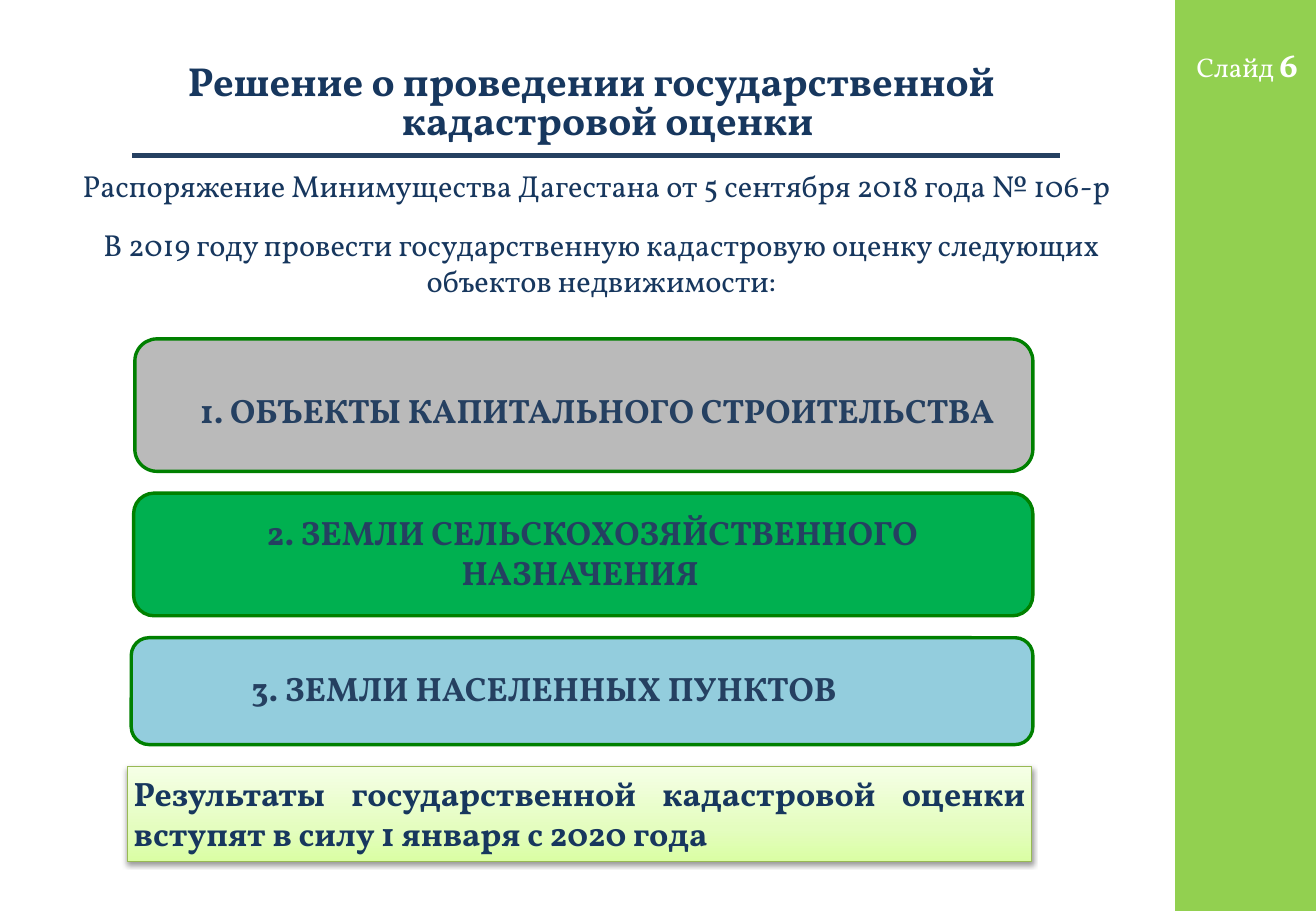
from copy import deepcopy
from dataclasses import dataclass

from lxml.etree import SubElement
from pptx import Presentation
from pptx.dml.color import RGBColor
from pptx.enum.shapes import MSO_CONNECTOR, MSO_SHAPE
from pptx.enum.text import MSO_ANCHOR, MSO_AUTO_SIZE, PP_ALIGN
from pptx.oxml.ns import qn
from pptx.util import Inches, Pt


@dataclass(frozen=True)
class Theme:
    font: str = "Vollkorn"
    navy: str = "17375E"
    slate: str = "254061"
    white: str = "FFFFFF"
    lime: str = "92D050"
    edge: str = "008000"
    gray: str = "BABABA"
    green: str = "00B050"
    blue: str = "93CDDD"
    rim: str = "98B955"
    fade: tuple = ((0, "DAFEA4"), (0.35, "E4FDBF"), (1, "F5FFE6"))
    title: int = 24
    head: int = 20
    body: int = 18
    small: int = 16


THEME = Theme()


def color(code):
    return RGBColor.from_string(code)


def place(box):
    return [Inches(side) for side in box]


def style(run, size, shade, bold):
    run.font.name = THEME.font
    run.font.size = Pt(size)
    run.font.bold = bold
    run.font.color.rgb = color(shade)


def write(shape, text, size, shade, bold=False, align=PP_ALIGN.CENTER,
          anchor=MSO_ANCHOR.TOP, inset=0.05, left=0, first=0):
    frame = shape.text_frame
    frame.text = text
    frame.word_wrap = True
    frame.auto_size = MSO_AUTO_SIZE.SHAPE_TO_FIT_TEXT
    frame.vertical_anchor = anchor
    frame.margin_left = frame.margin_right = Inches(inset)
    frame.margin_top = frame.margin_bottom = Inches(inset)
    para = frame.paragraphs[0]
    para.alignment = align
    if first:
        props = para._p.get_or_add_pPr()
        props.set("marL", str(Inches(left)))
        props.set("indent", str(Inches(first)))
    style(para.runs[0], size, shade, bold)
    return para


def add_text(shapes, box, text, size, shade, **options):
    shape = shapes.add_textbox(*place(box))
    return write(shape, text, size, shade, **options)


def add_block(shapes, kind, box, fill=None, line=None, width=2):
    shape = shapes.add_shape(kind, *place(box))
    shape.shadow.inherit = False
    if fill:
        shape.fill.solid()
        shape.fill.fore_color.rgb = color(fill)
    if line:
        shape.line.color.rgb = color(line)
        shape.line.width = Pt(width)
    else:
        shape.line.fill.background()
    return shape


def add_rule(shapes, left, right, top):
    rule = shapes.add_connector(
        MSO_CONNECTOR.STRAIGHT, *place((left, top, right, top)))
    rule.line.color.rgb = color(THEME.slate)
    rule.line.width = Pt(3)
    SubElement(rule._element.spPr, qn("a:effectLst"))


def add_item(shapes, card, box, text, fill, **options):
    group = shapes.add_group_shape().shapes
    add_block(group, MSO_SHAPE.ROUNDED_RECTANGLE, card, fill, THEME.edge)
    label = add_block(group, MSO_SHAPE.RECTANGLE, box, fill)
    write(label, text, THEME.head, THEME.slate, bold=True,
          anchor=MSO_ANCHOR.MIDDLE, **options)


def add_shade(shape):
    effects = shape._element.spPr.find(qn("a:effectLst"))
    outer = SubElement(effects, qn("a:outerShdw"), blurRad=str(Pt(3)),
                       dist=str(Pt(1.6)), dir="5400000", rotWithShape="0")
    tint = SubElement(outer, qn("a:srgbClr"), val="000000")
    SubElement(tint, qn("a:alpha"), val="38000")


def add_result(shapes, box, text):
    panel = add_block(shapes, MSO_SHAPE.RECTANGLE, box,
                      line=THEME.rim, width=0.75)
    panel.fill.gradient()
    panel.fill.gradient_angle = 90
    stops = panel._element.spPr.find(".//" + qn("a:gsLst"))
    stops.append(deepcopy(stops[0]))
    for stop, (spot, shade) in zip(panel.fill.gradient_stops, THEME.fade):
        stop.color.rgb = color(shade)
        stop.position = spot
    add_shade(panel)
    write(panel, text, THEME.head, THEME.navy, bold=True,
          align=PP_ALIGN.JUSTIFY)


def add_number(shapes, box, word, number):
    para = add_text(shapes, box, word, THEME.small, THEME.white)
    run = para.add_run()
    run.text = number
    style(run, THEME.head, THEME.white, True)


def main():
    deck = Presentation()
    deck.slide_width, deck.slide_height = Inches(10.83), Inches(7.5)
    shapes = deck.slides.add_slide(deck.slide_layouts[6]).shapes

    title = add_text(
        shapes, (1.4, 0.46, 6.93, 0.8),
        "Решение о проведении государственной кадастровой оценки",
        THEME.title, THEME.navy, bold=True, anchor=MSO_ANCHOR.MIDDLE,
        inset=0.04, left=0.27, first=-0.54)
    title.line_spacing = 0.8
    add_text(
        shapes, (0.46, 1.33, 8.9, 0.4),
        "Распоряжение Минимущества Дагестана от 5 сентября 2018 года № 106-р",
        THEME.body, THEME.navy)
    add_block(shapes, MSO_SHAPE.RECTANGLE, (9.67, 0, 1.16, 7.5), THEME.lime)
    add_rule(shapes, 1.09, 8.72, 1.28)
    add_number(shapes, (9.73, 0.31, 1.07, 0.43), "Слайд ", "6")
    add_text(
        shapes, (0.5, 1.81, 8.9, 0.71),
        "В 2019 году провести государственную кадастровую оценку "
        "следующих объектов недвижимости:",
        THEME.body, THEME.navy)

    add_item(shapes, (1.08, 5.25, 7.42, 0.88), (2.02, 5.44, 5.27, 0.44),
             "3. ЗЕМЛИ НАСЕЛЕННЫХ ПУНКТОВ", THEME.blue, align=PP_ALIGN.LEFT)
    add_item(shapes, (1.1, 4.06, 7.4, 1.01), (1.15, 4.16, 7.25, 0.77),
             "2. ЗЕМЛИ СЕЛЬСКОХОЗЯЙСТВЕННОГО НАЗНАЧЕНИЯ", THEME.green,
             first=0.2)
    add_item(shapes, (1.11, 2.79, 7.39, 1.09), (1.22, 2.99, 7.19, 0.77),
             "1. ОБЪЕКТЫ КАПИТАЛЬНОГО СТРОИТЕЛЬСТВА", THEME.gray, first=0.2)
    add_result(shapes, (1.05, 6.31, 7.44, 0.78),
               "Результаты государственной кадастровой оценки "
               "вступят в силу 1 января c 2020 года")
    deck.save("out.pptx")


if __name__ == "__main__":
    main()
